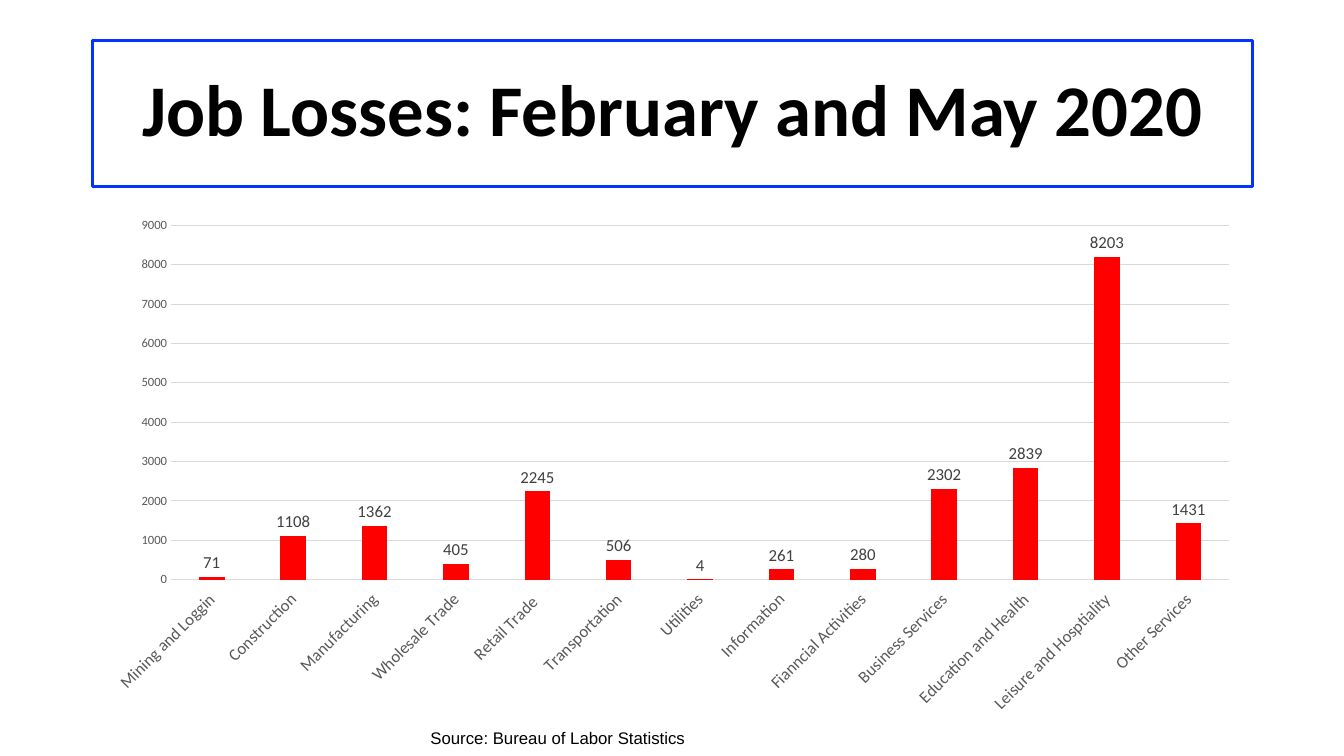
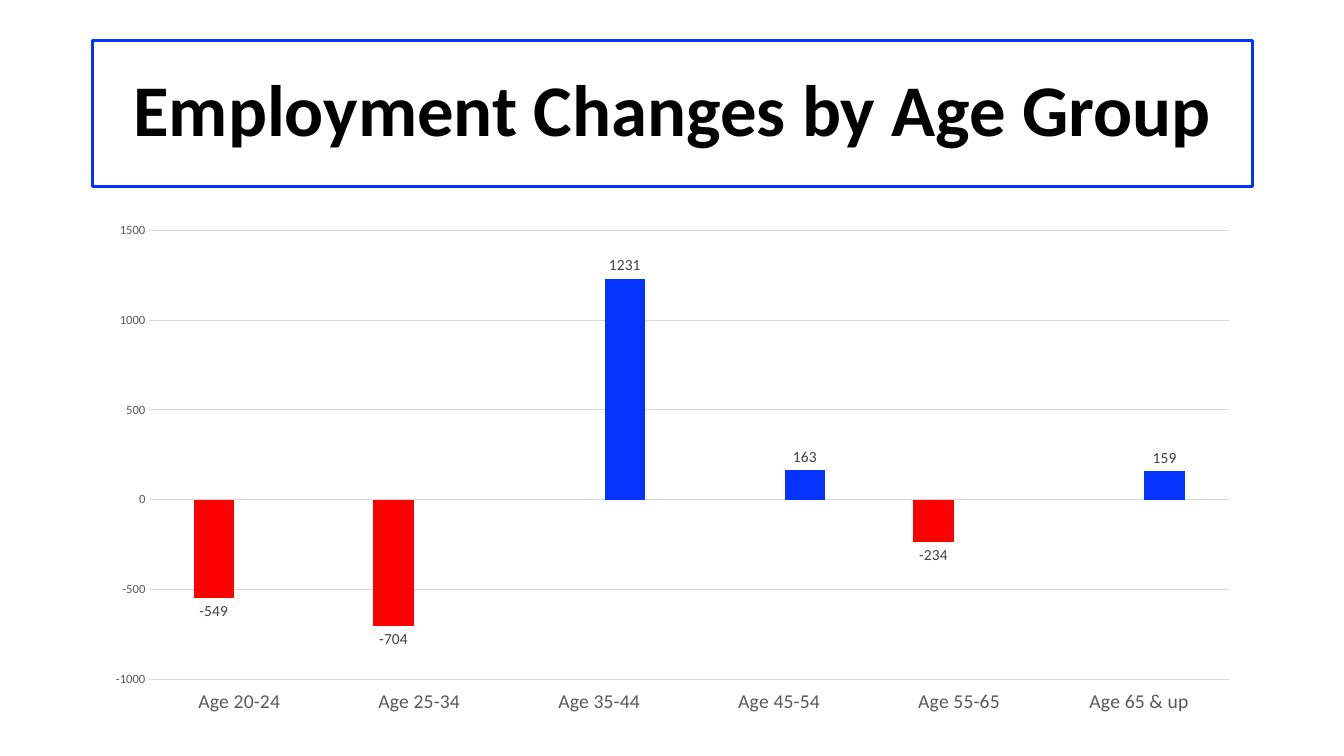
"""Build two slides on 2020 job losses, each with a framed title and a column chart."""
from pptx import Presentation
from pptx import util as u
from pptx.chart import data as chart_data
from pptx.dml import color
from pptx.enum import chart as kinds, shapes, text

COLOURS = {
    "blue": "0432FF", "red": "FF0000", "black": "000000",
    "grid": "D9D9D9", "axis": "595959", "label": "404040",
}
LEFT, WIDTH = 0.92, 11.5
CHART_BOTTOM = 7.18


class Slides:
    def __init__(self):
        self.deck = Presentation()
        self.deck.slide_width = u.Inches(13.33)
        self.deck.slide_height = u.Inches(7.5)
        self.page = None

    def add_page(self, title):
        self.page = self.deck.slides.add_slide(self.deck.slide_layouts[6])
        self.title(title)

    def rgb(self, name):
        return color.RGBColor.from_string(COLOURS[name])

    def font(self, font, colour, **values):
        for key, value in {"name": "Calibri", **values}.items():
            setattr(font, key, value)
        font.color.rgb = self.rgb(colour)

    def line(self, line, colour, width):
        line.color.rgb = self.rgb(colour)
        line.width = u.Pt(width)

    def title(self, words):
        box = self.page.shapes.add_shape(
            shapes.MSO_SHAPE.RECTANGLE,
            u.Inches(LEFT), u.Inches(0.4), u.Inches(WIDTH), u.Inches(1.45))
        box.shadow.inherit = False
        box.fill.background()
        self.line(box.line, "blue", 2.25)
        frame = box.text_frame
        frame.word_wrap = True
        frame.vertical_anchor = text.MSO_ANCHOR.MIDDLE
        para = frame.paragraphs[0]
        para.alignment = text.PP_ALIGN.CENTER
        para.line_spacing = 0.9
        self.span(para, words, size=u.Pt(52), bold=True)

    def span(self, para, words, **values):
        span = para.add_run()
        span.text = words
        self.font(span.font, "black", **values)

    def note(self, words, left, top, width, height):
        box = self.page.shapes.add_textbox(*map(u.Inches, (left, top, width, height)))
        frame = box.text_frame
        frame.word_wrap = False
        frame.auto_size = text.MSO_AUTO_SIZE.SHAPE_TO_FIT_TEXT
        self.span(frame.paragraphs[0], words, name="Arial", size=u.Pt(12))

    def columns(self, top, categories, series, category_size, label_size, slanted=False):
        data = chart_data.CategoryChartData(number_format="#0")
        data.categories = categories
        for number, (_, values) in enumerate(series, 1):
            data.add_series(f"Series {number}", values)
        chart = self.page.shapes.add_chart(
            kinds.XL_CHART_TYPE.COLUMN_CLUSTERED, u.Inches(LEFT), u.Inches(top),
            u.Inches(WIDTH), u.Inches(CHART_BOTTOM - top), data).chart
        chart.has_legend = chart.has_title = False
        self.font(chart.font, "black", size=u.Pt(10))
        self.axes(chart, category_size, slanted)
        plot = chart.plots[0]
        for key, value in {"gap_width": 219, "overlap": -27, "vary_by_categories": False}.items():
            setattr(plot, key, value)
        for column, (colour, _) in zip(plot.series, series):
            column.invert_if_negative = False
            column.format.fill.solid()
            column.format.fill.fore_color.rgb = self.rgb(colour)
            labels = column.data_labels
            for key, value in {
                "show_value": True, "number_format": "#0", "number_format_is_linked": False,
                "position": kinds.XL_LABEL_POSITION.OUTSIDE_END,
            }.items():
                setattr(labels, key, value)
            self.font(labels.font, "label", size=u.Pt(label_size))

    def axes(self, chart, category_size, slanted):
        category, value = chart.category_axis, chart.value_axis
        for axis, size in ((category, category_size), (value, 9)):
            axis.major_tick_mark = axis.minor_tick_mark = kinds.XL_TICK_MARK.NONE
            self.font(axis.tick_labels.font, "axis", size=u.Pt(size))
        category.tick_label_position = kinds.XL_TICK_LABEL_POSITION.LOW
        self.line(category.format.line, "grid", 0.75)
        if slanted:
            category._element.txPr.bodyPr.set("rot", "-2700000")
        value.format.line.fill.background()
        value.has_major_gridlines = True
        self.line(value.major_gridlines.format.line, "grid", 0.75)
        value.tick_labels.number_format = "#0"
        value.tick_labels.number_format_is_linked = False


def main():
    slides = Slides()

    losses = {
        "Mining and Loggin": 71, "Construction": 1108, "Manufacturing": 1362,
        "Wholesale Trade": 405, "Retail Trade ": 2245, "Transportation": 506,
        "Utilities": 4, "Information": 261, "Fianncial Activities": 280,
        "Business Services": 2302, "Education and Health": 2839,
        "Leisure and Hosptiality": 8203, "Other Services": 1431,
    }
    slides.add_page("Job Losses: February and May 2020")
    slides.columns(2.06, list(losses), [("red", list(losses.values()))], 12, 12, slanted=True)
    slides.note("Source: Bureau of Labor Statistics", 4.17, 7.17, 2.75, 0.3)

    changes = {
        "Age 20-24": -549, "Age 25-34": -704, "Age 35-44": 1231,
        "Age 45-54": 163, "Age 55-65": -234, "Age 65 & up": 159,
    }
    falls = [change if change < 0 else None for change in changes.values()]
    gains = [change if change > 0 else None for change in changes.values()]
    slides.add_page("Employment Changes by Age Group")
    slides.columns(2.11, list(changes), [("red", falls), ("blue", gains)], 14, 11)

    slides.deck.save("out.pptx")


if __name__ == "__main__":
    main()
